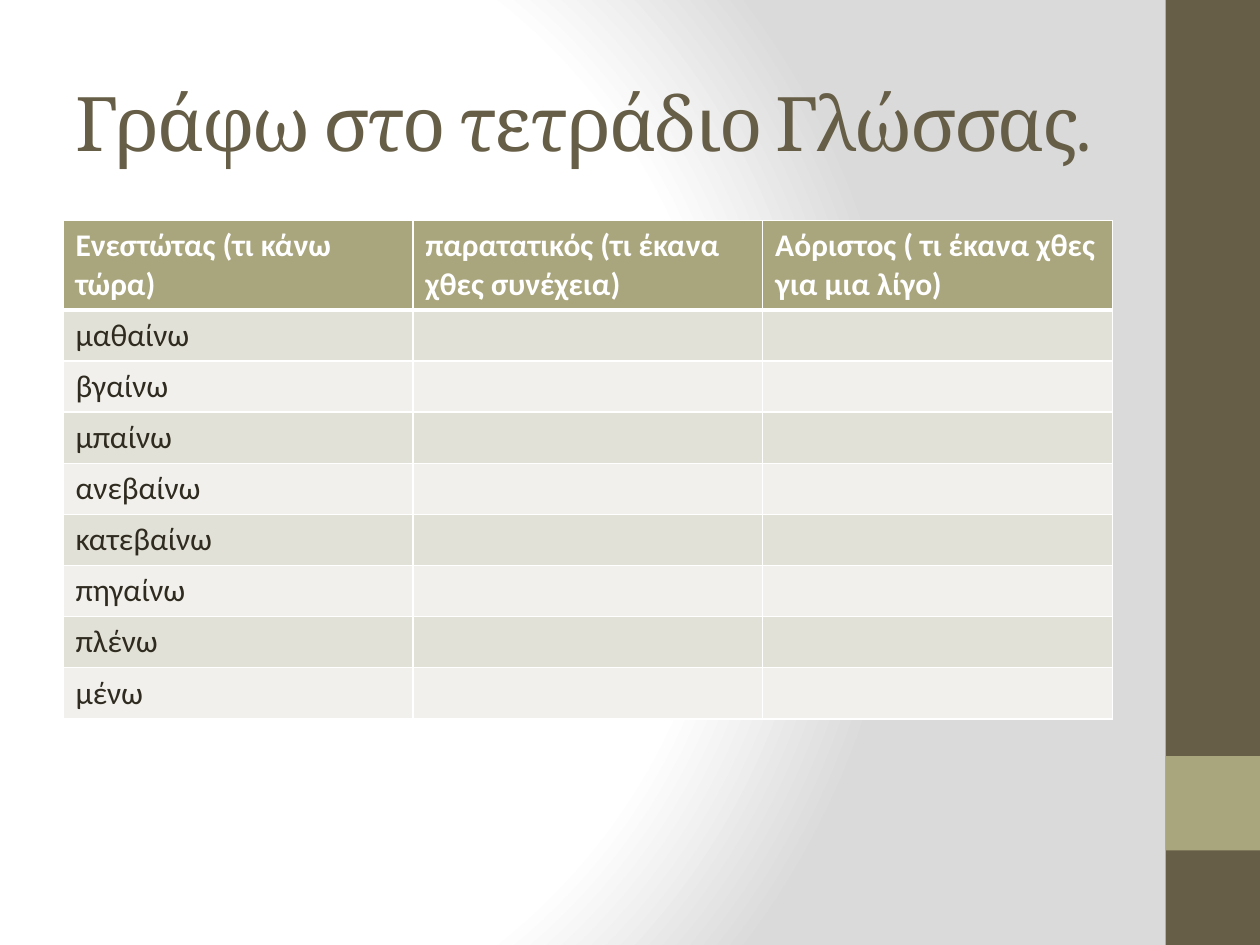
from typing import NamedTuple

from lxml import etree
from pptx import Presentation
from pptx.dml.color import RGBColor
from pptx.enum import shapes, text
from pptx.oxml import parse_xml
from pptx.oxml.ns import nsdecls, qn
from pptx.util import Inches, Pt

COLORS = {
    "brown": "675E47",
    "olive": "A9A57C",
    "band_dark": "E2E1D7",
    "band_light": "F1F0EC",
    "ink": "2F2B20",
    "white": "FFFFFF",
    "grey": "DADADA",
}
HEADINGS = [
    "Ενεστώτας (τι κάνω τώρα)",
    "παρατατικός (τι έκανα χθες συνέχεια)",
    "Αόριστος ( τι έκανα χθες για μια λίγο)",
]
VERBS = ["μαθαίνω", "βγαίνω", "μπαίνω", "ανεβαίνω",
         "κατεβαίνω", "πηγαίνω", "πλένω", "μένω"]


class SideBlock(NamedTuple):
    top: float
    height: float
    color: str


class CellStyle(NamedTuple):
    fill: str
    ink: str
    bold: bool
    top_border: float
    bottom_border: float


SIDE_BLOCKS = [SideBlock(0, 7.5, "brown"), SideBlock(6, 0.75, "olive")]
HEADER = CellStyle("olive", "white", True, 1, 3)


def rgb(name: str) -> RGBColor:
    return RGBColor.from_string(COLORS[name])


def set_background(slide) -> None:
    """Give the slide a radial gradient from white to grey."""
    stops = "".join(
        f'<a:gs pos="{percent * 1000}"><a:srgbClr val="{COLORS[name]}"/></a:gs>'
        for percent, name in [(0, "white"), (75, "white"), (100, "grey")])
    slide.element.cSld.insert(0, parse_xml(
        f'<p:bg {nsdecls("p", "a")}><p:bgPr><a:gradFill rotWithShape="1">'
        f'<a:gsLst>{stops}</a:gsLst><a:path path="circle">'
        '<a:fillToRect l="20000" t="50000" r="100000" b="50000"/></a:path>'
        '</a:gradFill><a:effectLst/></p:bgPr></p:bg>'))


def draw_side_block(slide, block: SideBlock) -> None:
    bar = slide.shapes.add_shape(
        shapes.MSO_SHAPE.RECTANGLE, Inches(9.25), Inches(block.top),
        Inches(0.75), Inches(block.height))
    bar.shadow.inherit = False
    bar.fill.solid()
    bar.fill.fore_color.rgb = rgb(block.color)
    bar.line.fill.background()


def write_title(slide, wording: str) -> None:
    title = slide.shapes.title
    title.left, title.top = Inches(0.5), Inches(0.3)
    title.width, title.height = Inches(8.33), Inches(1.25)
    frame = title.text_frame
    frame.vertical_anchor = text.MSO_ANCHOR.MIDDLE
    frame.auto_size = text.MSO_AUTO_SIZE.TEXT_TO_FIT_SHAPE
    paragraph = frame.paragraphs[0]
    paragraph.alignment = text.PP_ALIGN.LEFT
    run = paragraph.add_run()
    run.text = wording
    run.font.size, run.font.name = Pt(46), "Cambria"
    run.font.color.rgb = rgb("brown")
    run.font._element.set("spc", "-100")


def set_borders(cell, style: CellStyle) -> None:
    properties = cell._tc.get_or_add_tcPr()
    widths = {"L": 1, "R": 1, "T": style.top_border, "B": style.bottom_border}
    for position, (side, width) in enumerate(widths.items()):
        border = etree.Element(qn(f"a:ln{side}"), w=str(Pt(width)))
        solid = etree.SubElement(border, qn("a:solidFill"))
        etree.SubElement(solid, qn("a:srgbClr"), val=COLORS["white"])
        properties.insert(position, border)


def fill_cell(cell, wording: str, style: CellStyle) -> None:
    cell.fill.solid()
    cell.fill.fore_color.rgb = rgb(style.fill)
    set_borders(cell, style)
    if wording:
        run = cell.text_frame.paragraphs[0].add_run()
        run.text = wording
        run.font.size, run.font.name = Pt(18), "Calibri"
        run.font.bold = style.bold
        run.font.color.rgb = rgb(style.ink)


def draw_verb_table(slide) -> None:
    rows = [HEADINGS] + [[verb, "", ""] for verb in VERBS]
    table = slide.shapes.add_table(
        len(rows), len(HEADINGS), Inches(0.5), Inches(1.75),
        Inches(8.33), Inches(0.405 * len(rows))).table
    for index, wordings in enumerate(rows):
        band = "band_dark" if index % 2 else "band_light"
        style = HEADER if index == 0 else CellStyle(
            band, "ink", False, 3 if index == 1 else 1, 1)
        for cell, wording in zip(table.rows[index].cells, wordings):
            fill_cell(cell, wording, style)


def main() -> None:
    deck = Presentation()
    deck.slide_width, deck.slide_height = Inches(10), Inches(7.5)
    slide = deck.slides.add_slide(deck.slide_layouts[5])
    set_background(slide)
    for block in SIDE_BLOCKS:
        draw_side_block(slide, block)
    write_title(slide, "Γράφω στο τετράδιο Γλώσσας.")
    draw_verb_table(slide)
    deck.save("out.pptx")


if __name__ == "__main__":
    main()
